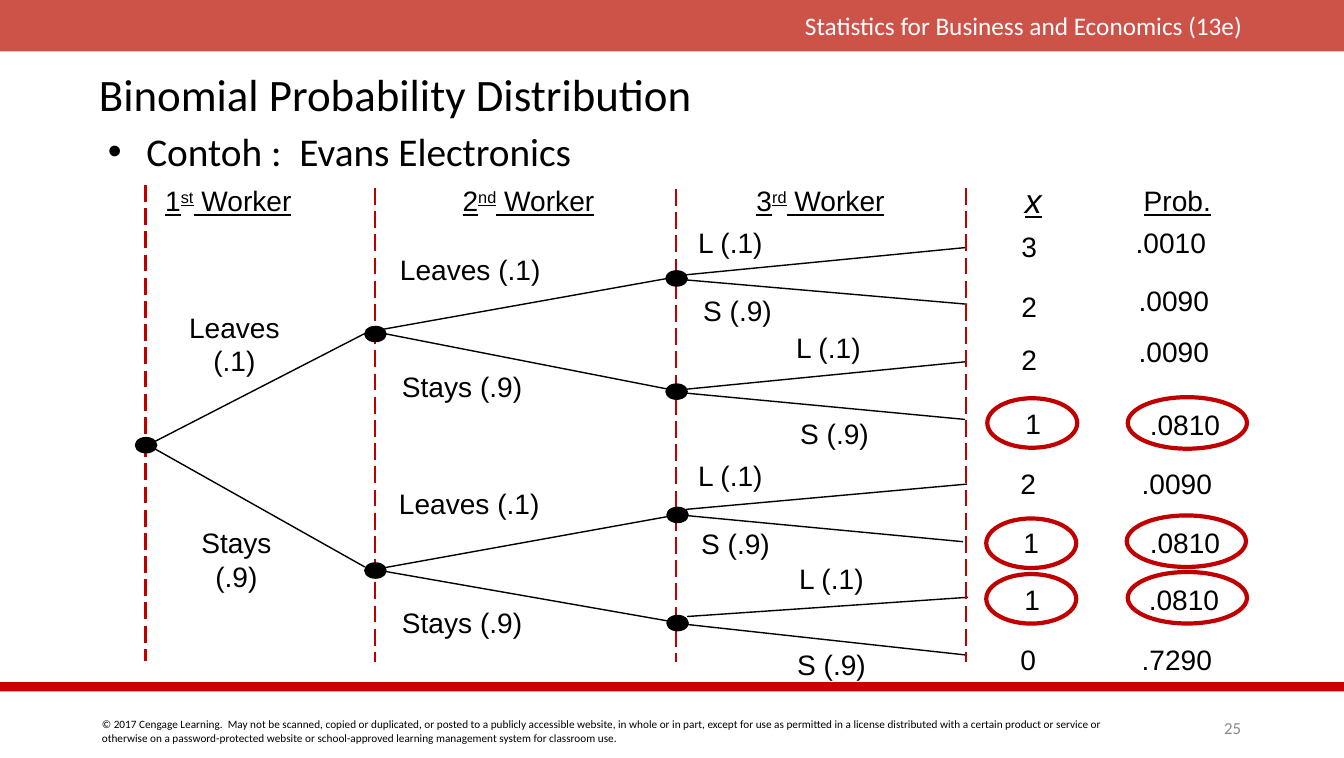
from dataclasses import dataclass

from lxml import etree
from pptx import Presentation
from pptx.dml.color import RGBColor
from pptx.enum.dml import MSO_LINE
from pptx.enum.shapes import MSO_CONNECTOR, MSO_SHAPE
from pptx.enum.text import MSO_ANCHOR, PP_ALIGN
from pptx.oxml.ns import qn
from pptx.util import Pt

LEFT, CENTER, RIGHT = PP_ALIGN.LEFT, PP_ALIGN.CENTER, PP_ALIGN.RIGHT
TOP, MIDDLE = MSO_ANCHOR.TOP, MSO_ANCHOR.MIDDLE
RECT, OVAL = MSO_SHAPE.RECTANGLE, MSO_SHAPE.OVAL
STRAIGHT, LONG_DASH = MSO_CONNECTOR.STRAIGHT, MSO_LINE.LONG_DASH
PX = 9144  # 100 px to the inch


@dataclass(frozen=True)
class Theme:
    body: str = "Calibri"
    tree: str = "Arial"
    black: str = "000000"
    white: str = "FFFFFF"
    grey: str = "8C8C8C"
    band: str = "BF2317"
    rule: str = "CC0000"
    accent: str = "C00000"
    title_size: int = 32
    bullet_size: int = 28
    x_size: int = 24
    tree_size: int = 20
    book_size: int = 18
    number_size: int = 12
    legal_size: int = 8


T = Theme()

# Content
BOOK = "Statistics for Business and Economics (13e)"
TITLE = "Binomial Probability Distribution"
EXAMPLE = "Contoh :  Evans Electronics"
LEGAL = ("© 2017 Cengage Learning.  May not be scanned, copied or duplicated, or posted to a "
         "publicly accessible website, in whole or in part, except for use as permitted in a "
         "license distributed with a certain product or service or otherwise on a "
         "password-protected website or school-approved learning management system for "
         "classroom use.")
PAGE = "25"

# Column heads: number, ordinal, centre x
WORKERS = [("1", "st", 226), ("2", "nd", 523), ("3", "rd", 812)]
# Stage dividers: x, top, bottom
DIVIDERS = [(144, 183, 654), (371, 186, 655), (669, 187, 655), (956, 186, 655)]
# Decision points: centre x, centre y
NODES = [(144, 440), (371, 330), (371, 564),
         (669, 275), (669, 387), (670, 509), (670, 616)]
# Branches: start x, start y, end x, end y
BRANCHES = [
    (151, 438, 361, 330), (153, 444, 361, 561),
    (378, 326, 669, 274), (380, 330, 666, 386),
    (379, 562, 667, 510), (379, 565, 670, 616),
    (678, 272, 955, 245), (679, 277, 957, 301),
    (680, 385, 955, 358), (679, 389, 955, 415),
    (679, 504, 957, 479), (678, 510, 953, 536),
    (680, 610, 958, 591), (681, 618, 955, 648),
]
# Branch labels: text, box width, box corners
LABELS = [
    ("Leaves (.1)", 160, [(386, 245), (385, 476)]),
    ("Stays (.9)", 140, [(388, 361), (388, 594)]),
    ("L (.1)", 84, [(681, 218), (778, 322), (681, 449), (781, 551)]),
    ("S (.9)", 88, [(686, 285), (782, 407), (684, 516), (779, 636)]),
]
# First-stage labels: lines, box left, top, width
FIRST_STAGE = [(["Leaves", "(.1)"], 177, 302, 110), (["Stays", "(.9)"], 189, 515, 90)]
# Outcomes: x value, its left and top, probability, its left and top
OUTCOMES = [
    ("3", 1001, 222, ".0010", 1114, 218),
    ("2", 1001, 281, ".0090", 1117, 276),
    ("2", 1001, 334, ".0090", 1117, 326),
    ("1", 1005, 397, ".0810", 1128, 398),
    ("2", 1000, 457, ".0090", 1120, 457),
    ("1", 1003, 515, ".0810", 1128, 515),
    ("1", 1004, 571, ".0810", 1127, 571),
    ("0", 1000, 631, ".7290", 1120, 631),
]
# Rings round the outcomes with one leaver: width, height, corners
RINGS = [
    (89, 49, [(977, 394), (976, 513), (976, 568)]),
    (118, 51, [(1116, 393), (1115, 510), (1116, 566)]),
]

prs = Presentation()
prs.slide_width, prs.slide_height = 1330 * PX, 750 * PX
s = prs.slides.add_slide(prs.slide_layouts[6])


def rgb(color):
    return RGBColor.from_string(color)


def text(lines, x, y, w, h, size=T.tree_size, font=T.tree, color=T.black,
         align=LEFT, anchor=TOP, wrap=False):
    tf = s.shapes.add_textbox(x * PX, y * PX, w * PX, h * PX).text_frame
    tf.word_wrap, tf.vertical_anchor = wrap, anchor
    tf.text = "\n".join(lines)
    for p in tf.paragraphs:
        p.alignment = align
        p.font.size, p.font.name = Pt(size), font
        p.font.color.rgb = rgb(color)
    return tf.paragraphs[0]


def shape(kind, x, y, w, h, fill=None, line=None, weight=1):
    sp = s.shapes.add_shape(kind, x * PX, y * PX, w * PX, h * PX)
    sp.shadow.inherit = False
    if fill:
        sp.fill.solid()
        sp.fill.fore_color.rgb = rgb(fill)
    else:
        sp.fill.background()
    if line:
        sp.line.color.rgb, sp.line.width = rgb(line), Pt(weight)
    else:
        sp.line.fill.background()
    return sp


def line(x1, y1, x2, y2, color=T.black, weight=1, dash=None):
    c = s.shapes.add_connector(STRAIGHT, x1 * PX, y1 * PX, x2 * PX, y2 * PX)
    c.line.color.rgb, c.line.width = rgb(color), Pt(weight)
    if dash:
        c.line.dash_style = dash
    etree.SubElement(c._element.spPr, qn("a:effectLst"))


# Header band, footer rule and their texts
band = shape(RECT, 0, 0, 1330, 51, T.band)
band_color = band._element.spPr.find(qn("a:solidFill"))[0]
etree.SubElement(band_color, qn("a:alpha")).set("val", "78000")
shape(RECT, 0, 675, 1330, 9, T.rule)
text([BOOK], 665, 5, 574, 40, T.book_size, T.body, T.white, RIGHT, wrap=True)
text([LEGAL], 91, 705, 1030, 37, T.legal_size, T.body, wrap=True)
text([PAGE], 1170, 705, 68, 30, T.number_size, T.body, T.grey, RIGHT, MIDDLE, True)

# Title and bullet
p = text([TITLE], 88, 62, 1131, 67, T.title_size, T.body, anchor=MIDDLE, wrap=True)
p.line_spacing = 0.9
p = text([], 97, 121, 809, 60, wrap=True)
pPr = p._p.get_or_add_pPr()
pPr.set("marL", str(38 * PX))
pPr.set("indent", str(-38 * PX))
for tag, key, value in (("a:buFont", "typeface", T.tree), ("a:buChar", "char", "•")):
    bullet = etree.Element(qn(tag))
    bullet.set(key, value)
    pPr.find(qn("a:defRPr")).addprevious(bullet)
p.text = EXAMPLE
p.font.size, p.font.name = Pt(T.bullet_size), T.body

# Column heads
for number, ordinal, center in WORKERS:
    p = text([number], center - 77, 177, 154, 43, align=CENTER)
    p.font.underline = True
    r = p.add_run()
    r.text = ordinal
    r._r.get_or_add_rPr().set("baseline", "30000")
    p.add_run().text = " Worker"
p = text(["x"], 1004, 173, 37, 50, T.x_size, align=CENTER)
p.font.italic = p.font.underline = True
text(["Prob."], 1122, 177, 87, 43).font.underline = True

# Tree
for branch in BRANCHES:
    line(*branch)
for x, top, bottom in DIVIDERS:
    line(x, top, x, bottom, T.accent, 1.5, LONG_DASH)
for x, y in NODES:
    shape(OVAL, x - 10, y - 7, 21, 15, T.black, T.black)
for lines, x, y, w in FIRST_STAGE:
    text(lines, x, y, w, 77, align=CENTER)
for label, w, corners in LABELS:
    for x, y in corners:
        text([label], x, y, w, 43)

# Outcomes and rings
for value, x, y, prob, prob_x, prob_y in OUTCOMES:
    text([value], x, y, 36, 43)
    text([prob], prob_x, prob_y, 90, 43)
for w, h, corners in RINGS:
    for x, y in corners:
        shape(OVAL, x, y, w, h, line=T.accent, weight=3)

prs.save("out.pptx")
